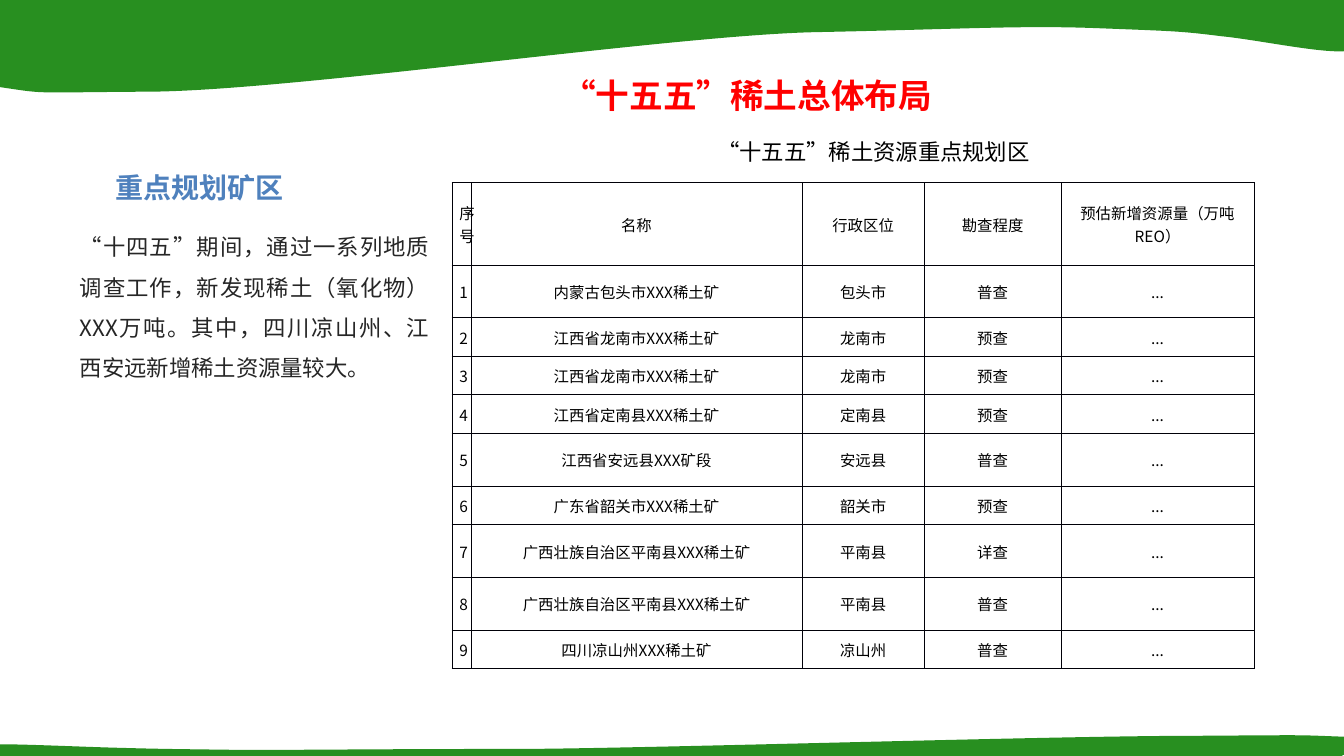
"""Build the slide on the overall rare earth layout and its key planning areas."""
from lxml import etree
from pptx import Presentation
from pptx.dml.color import RGBColor
from pptx.enum.text import MSO_ANCHOR, MSO_AUTO_SIZE, PP_ALIGN
from pptx.oxml.ns import qn
from pptx.util import Pt

TOP, MIDDLE = MSO_ANCHOR.TOP, MSO_ANCHOR.MIDDLE
LEFT, CENTER, JUSTIFY = PP_ALIGN.LEFT, PP_ALIGN.CENTER, PP_ALIGN.JUSTIFY
GROW, FIXED = MSO_AUTO_SIZE.SHAPE_TO_FIT_TEXT, MSO_AUTO_SIZE.NONE
GREEN = RGBColor(0x28, 0x8F, 0x20)
BLUE = RGBColor(0x4F, 0x81, 0xBD)
RED = RGBColor(0xFF, 0x00, 0x00)
DARK = RGBColor(0x26, 0x26, 0x26)
BLACK = RGBColor(0x00, 0x00, 0x00)
BORDER = RGBColor(0x00, 0x00, 0x08)
FONT = "Noto Sans CJK SC"

TITLE = "“十五五”稀土总体布局"
TABLE_TITLE = "“十五五”稀土资源重点规划区"
HEADING = "重点规划矿区"
BODY = ("“十四五”期间，通过一系列地质调查工作，新发现稀土（氧化物）XXX万吨。"
        "其中，四川凉山州、江西安远新增稀土资源量较大。")

HEADER = ("序号", "名称", "行政区位", "勘查程度", "预估新增资源量（万吨REO）")
TALL, SHORT = 37.7, 27.5
MINES = [
    ("内蒙古包头市XXX稀土矿", "包头市", "普查", TALL),
    ("江西省龙南市XXX稀土矿", "龙南市", "预查", SHORT),
    ("江西省龙南市XXX稀土矿", "龙南市", "预查", SHORT),
    ("江西省定南县XXX稀土矿", "定南县", "预查", SHORT),
    ("江西省安远县XXX矿段", "安远县", "普查", TALL),
    ("广东省韶关市XXX稀土矿", "韶关市", "预查", SHORT),
    ("广西壮族自治区平南县XXX稀土矿", "平南县", "详查", TALL),
    ("广西壮族自治区平南县XXX稀土矿", "平南县", "普查", TALL),
    ("四川凉山州XXX稀土矿", "凉山州", "普查", SHORT),
]
COLUMNS = (13.6, 236.4, 87.4, 97.6, 138)
HEADER_HEIGHT = 59

BANDS = [
    {"start": (967.7, 34.6),
     "curves": [((959.8, 41.8), (902.2, 28.8), (872.6, 25.9)),
                ((843.8, 22.3), (840.2, 22.3), (784.8, 20.2)),
                ((729.4, 18), (686.2, 20.9), (582.5, 23)),
                ((478.8, 25.2), (204.5, 65.5), (104.4, 65.5)),
                ((3.6, 66.2), (43.2, 67.7), (-23.8, 59))],
     "corners": [(0, -1.4), (960, -1.4)]},
    {"start": (-9.4, 532.1),
     "curves": [((-1.4, 530.6), (56.2, 533.5), (85.7, 534.2)),
                ((114.5, 535), (118.1, 535), (173.5, 535.7)),
                ((229, 535.7), (272.2, 535), (375.8, 535)),
                ((479.5, 534.2), (753.8, 525.6), (853.9, 525.6)),
                ((954.7, 524.9), (915.1, 524.9), (982.1, 527))],
     "corners": [(958.3, 540), (-1.4, 540)]},
]


def add_band(s, start, curves, corners):
    """Draw one green wave along an edge of the slide."""
    anchors = [curve[-1] for curve in curves] + corners
    builder = s.shapes.build_freeform(*map(Pt, start), scale=1.0)
    builder.add_line_segments([(Pt(x), Pt(y)) for x, y in anchors], close=True)
    sp = builder.convert_to_shape()
    segments = list(sp._element.iter(qn("a:lnTo")))
    for segment, curve in zip(segments, curves):
        bezier = etree.Element(qn("a:cubicBezTo"))
        for x, y in curve:
            etree.SubElement(bezier, qn("a:pt"), x=str(Pt(x) - sp.left), y=str(Pt(y) - sp.top))
        segment.getparent().replace(segment, bezier)
    sp.shadow.inherit = False
    sp.fill.solid()
    sp.fill.fore_color.rgb = GREEN
    sp.line.fill.background()


def write(tf, text, size=11, color=BLACK, bold=False, align=CENTER, spacing=None, indent=0):
    """Put formatted text in the first paragraph of a frame."""
    tf.word_wrap = True
    p = tf.paragraphs[0]
    p.alignment = align
    if spacing:
        p.line_spacing = spacing
    if indent:
        p._p.get_or_add_pPr().set("indent", str(Pt(indent)))
    r = p.add_run()
    r.text = text
    r.font.size = Pt(size)
    r.font.bold = bold
    r.font.name = FONT
    r.font.color.rgb = color
    etree.SubElement(r._r.get_or_add_rPr(), qn("a:ea")).set("typeface", FONT)


def add_text(s, box, text, inset=(7.2, 3.6), anchor=TOP, auto_size=FIXED, **style):
    """Add a text box at a place given in points."""
    tf = s.shapes.add_textbox(*map(Pt, box)).text_frame
    tf.margin_left = tf.margin_right = Pt(inset[0])
    tf.margin_top = tf.margin_bottom = Pt(inset[1])
    tf.vertical_anchor = anchor
    write(tf, text, **style)
    tf.auto_size = auto_size


def format_cell(cell, text):
    """Give a cell its text, thin borders and no fill."""
    cell.margin_left = cell.margin_right = Pt(5.2)
    cell.margin_top, cell.margin_bottom = Pt(0.7), Pt(0)
    cell.vertical_anchor = MIDDLE
    write(cell.text_frame, text)
    tc_pr = cell._tc.get_or_add_tcPr()
    for side in ("a:lnL", "a:lnR", "a:lnT", "a:lnB"):
        ln = etree.SubElement(tc_pr, qn(side), w=str(Pt(0.5)))
        fill = etree.SubElement(ln, qn("a:solidFill"))
        etree.SubElement(fill, qn("a:srgbClr"), val=str(BORDER))
    cell.fill.background()


def add_mine_table(s):
    """Add the table of planned mining areas."""
    rows = [HEADER] + [(str(i), *mine[:3], "...") for i, mine in enumerate(MINES, 1)]
    heights = [HEADER_HEIGHT] + [mine[3] for mine in MINES]
    frame = s.shapes.add_table(len(rows), len(COLUMNS), Pt(322.9), Pt(130.3),
                               Pt(sum(COLUMNS)), Pt(sum(heights)))
    table = frame.table
    table.first_row = table.horz_banding = False
    for column, width in zip(table.columns, COLUMNS):
        column.width = Pt(width)
    for row, height, texts in zip(table.rows, heights, rows):
        row.height = Pt(height)
        for cell, text in zip(row.cells, texts):
            format_cell(cell, text)


def main():
    prs = Presentation()
    prs.slide_width, prs.slide_height = Pt(960), Pt(540)
    s = prs.slides.add_slide(prs.slide_layouts[6])
    for band in BANDS:
        add_band(s, **band)
    add_text(s, (82.4, 110.2, 211, 46.8), HEADING, inset=(0, 0), anchor=MIDDLE,
             size=20, color=BLUE, bold=True, align=LEFT)
    add_text(s, (57, 157.1, 250, 167), BODY, inset=(0, 0),
             size=16, color=DARK, align=JUSTIFY, spacing=1.5)
    add_text(s, (408.4, 95, 400.3, 26.6), TABLE_TITLE, auto_size=GROW, size=16, indent=31)
    add_mine_table(s)
    add_text(s, (293.5, 49.7, 480.2, 36), TITLE, auto_size=GROW,
             size=24, color=RED, bold=True)
    prs.save("out.pptx")


if __name__ == "__main__":
    main()
